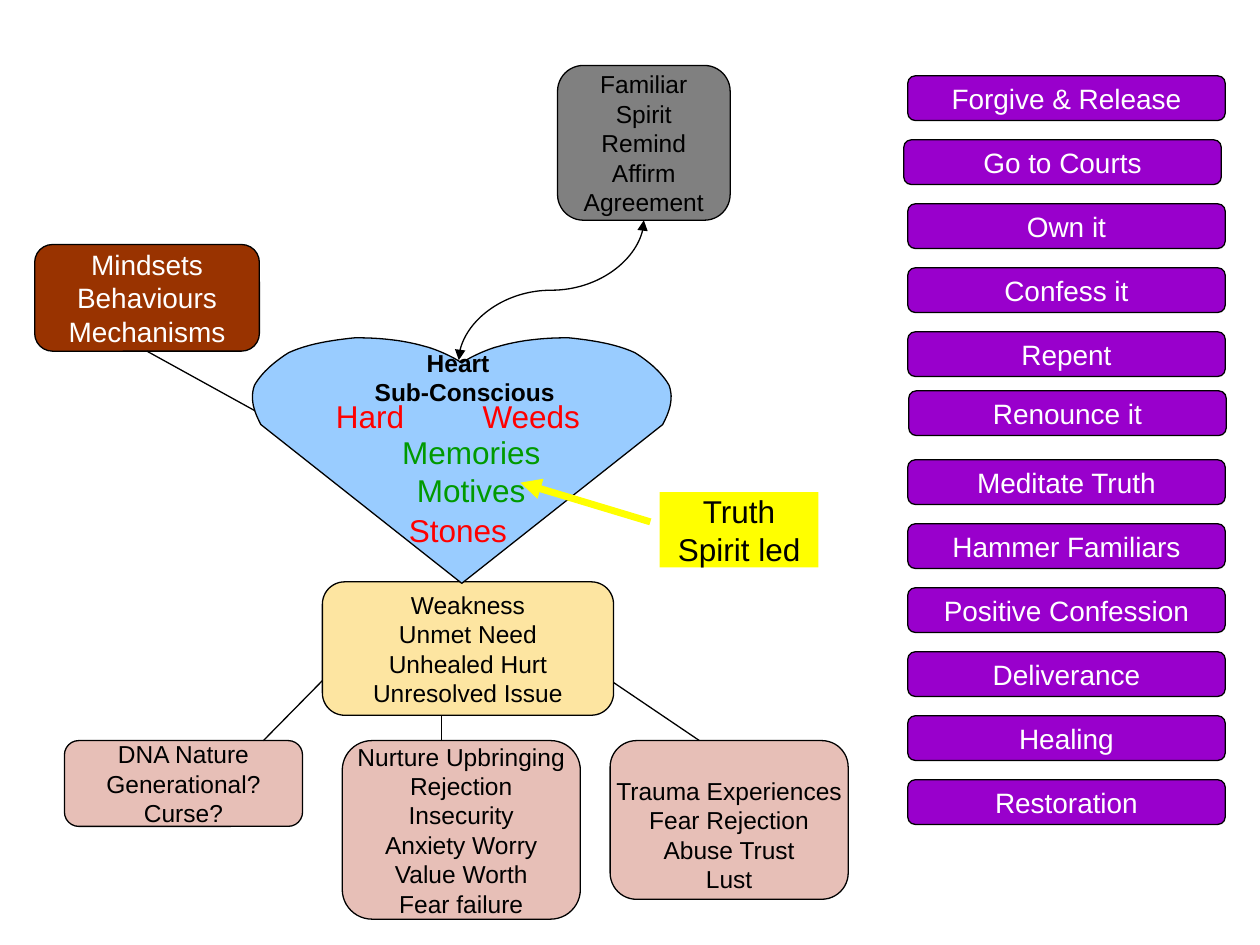
from lxml import etree
from pptx import Presentation
from pptx.dml.color import RGBColor
from pptx.enum.shapes import MSO_CONNECTOR, MSO_SHAPE
from pptx.enum.text import MSO_ANCHOR, PP_ALIGN
from pptx.oxml.ns import qn
from pptx.util import Cm, Pt

ROUNDED = MSO_SHAPE.FLOWCHART_ALTERNATE_PROCESS
RECT = MSO_SHAPE.RECTANGLE
STRAIGHT, CURVE = MSO_CONNECTOR.STRAIGHT, MSO_CONNECTOR.CURVE
MIDDLE, TOP = MSO_ANCHOR.MIDDLE, MSO_ANCHOR.TOP
CENTER = PP_ALIGN.CENTER
BOTTOM_SIDE = 2

COLORS = {
    "black": "000000", "white": "FFFFFF", "pink": "E7BFB7", "grey": "808080",
    "cream": "FDE5A1", "brown": "993300", "blue": "99CCFF", "red": "FF0000",
    "green": "009A00", "purple": "9900CC", "yellow": "FFFF00",
}

BOXES = {
    "dna": ((1.3, 14.93, 4.8, 1.73), "pink", "black", 14,
            ["DNA Nature", "Generational?", "Curse?"]),
    "nurture": ((6.9, 14.93, 4.8, 3.6), "pink", "black", 14,
                ["Nurture Upbringing", "Rejection", "Insecurity",
                 "Anxiety Worry", "Value Worth", "Fear failure"]),
    "trauma": ((12.3, 14.93, 4.8, 3.2), "pink", "black", 14,
               ["Trauma Experiences", "Fear Rejection", "Abuse Trust", "Lust"]),
    "familiar": ((11.24, 1.32, 3.48, 3.12), "grey", "black", 14,
                 ["Familiar", "Spirit", "Remind", "Affirm", "Agreement"]),
    "weakness": ((6.5, 11.73, 5.87, 2.69), "cream", "black", 14,
                 ["Weakness", "Unmet Need", "Unhealed Hurt", "Unresolved Issue"]),
    "mindsets": ((0.7, 4.93, 4.53, 2.15), "brown", "white", 16,
                 ["Mindsets", "Behaviours", "Mechanisms"]),
}

ACTIONS = ["Forgive & Release", "Go to Courts", "Own it", "Confess it", "Repent",
           "Renounce it", "Meditate Truth", "Hammer Familiars",
           "Positive Confession", "Deliverance", "Healing", "Restoration"]
ACTION_LEFT, ACTION_TOP, ACTION_PITCH = 18.3, 1.53, 1.29
ACTION_SIZE = (6.4, 0.9)
ACTION_SHIFTS = {"Go to Courts": (-0.08, 0), "Renounce it": (0.02, -0.1)}

HEART_LABELS = [
    ((6.16, 8, 2.6, 0.76), ["Hard"], "red"),
    ((9.41, 8, 2.6, 0.76), ["Weeds"], "red"),
    ((7.93, 10.3, 2.6, 0.76), ["Stones"], "red"),
    ((7.9, 8.73, 3.2, 1.52), ["Memories", "Motives"], "green"),
]

BRANCHES = [(12.37, 13.76, 14.1, 14.93), (8.9, 14.42, 8.9, 14.93),
            (6.5, 13.72, 5.31, 14.93)]
MINDSET_LINK = (5.23, 8.33, 2.96, 7.08)
SPIRIT_LINK = (9.25, 7.26, 12.98, 4.44)
TRUTH_ARROW = (13.11, 10.52, 10.49, 9.73)

HEART_AXIS = 9.31
HEART_DIP, HEART_TIP = (9.31, 7.32), (9.31, 11.76)
HEART_CURVES = [
    ((9.17, 7.21), (8.79, 7.04), (8.59, 6.99)),
    ((8.15, 6.86), (7.67, 6.81), (7.16, 6.81)),
    ((6.68, 6.86), (6.22, 6.93), (5.82, 7.11)),
    ((5.49, 7.32), (5.26, 7.54), (5.13, 7.77)),
    ((5.03, 8.05), (5.13, 8.31), (5.26, 8.56)),
]
CURVE_STEPS = 12


def rgb(name):
    return RGBColor.from_string(COLORS[name])


def write(sp, lines, size, color, anchor=MIDDLE, wrap=False, bold=False):
    tf = sp.text_frame
    tf.margin_left = tf.margin_right = tf.margin_top = tf.margin_bottom = 0
    tf.vertical_anchor = anchor
    tf.word_wrap = wrap
    tf.text = "\n".join(lines)
    for p in tf.paragraphs:
        p.alignment = CENTER
        p.font.name = "Arial"
        p.font.size = Pt(size)
        p.font.bold = bold
        p.font.color.rgb = rgb(color)
    return tf


def style(sp, fill, outlined=True):
    sp.shadow.inherit = False
    sp.fill.solid()
    sp.fill.fore_color.rgb = rgb(fill)
    if outlined:
        sp.line.color.rgb = rgb("black")
        sp.line.width = Pt(0.75)
    else:
        sp.line.fill.background()


def add_box(s, at, fill, color, size, lines):
    sp = s.shapes.add_shape(ROUNDED, *map(Cm, at))
    style(sp, fill)
    write(sp, lines, size, color)
    return sp


def add_label(s, at, lines, size, color, bold=False):
    sp = s.shapes.add_textbox(*map(Cm, at))
    return write(sp, lines, size, color, TOP, True, bold)


def add_line(s, ends, color="black", width=0.75, kind=STRAIGHT, arrows=()):
    c = s.shapes.add_connector(kind, *map(Cm, ends))
    c.line.color.rgb = rgb(color)
    c.line.width = Pt(width)
    ln = c.line._get_or_add_ln()
    for arrow in arrows:
        etree.SubElement(ln, qn(f"a:{arrow}"), type="triangle")
    etree.SubElement(c._element.spPr, qn("a:effectLst"))
    return c


def add_spirit_link(s, familiar):
    x1, y1, x2, y2 = SPIRIT_LINK
    mid_x, mid_y, width, height = (x1 + x2) / 2, (y1 + y2) / 2, y1 - y2, x2 - x1
    left, top = mid_x - width / 2, mid_y - height / 2
    c = add_line(s, (left, top, left + width, top + height), kind=CURVE,
                 arrows=("headEnd", "tailEnd"))
    c.end_connect(familiar, BOTTOM_SIDE)
    c.left, c.top, c.width, c.height = map(Cm, (left, top, width, height))
    c._element.spPr.find(qn("a:xfrm")).set("rot", "16200000")


def bezier(p0, p1, p2, p3, t):
    u = 1 - t
    return tuple(u**3 * a + 3 * u * u * t * b + 3 * u * t * t * c + t**3 * d
                 for a, b, c, d in zip(p0, p1, p2, p3))


def add_heart(s):
    half = [HEART_DIP]
    for c1, c2, end in HEART_CURVES:
        start = half[-1]
        half += [bezier(start, c1, c2, end, i / CURVE_STEPS)
                 for i in range(1, CURVE_STEPS + 1)]
    mirrored = [(2 * HEART_AXIS - x, y) for x, y in reversed(half[1:])]
    points = [(Cm(x), Cm(y)) for x, y in half + [HEART_TIP] + mirrored]
    fb = s.shapes.build_freeform(*points[0])
    fb.add_line_segments(points[1:], close=True)
    style(fb.convert_to_shape(), "blue")


def add_heart_labels(s):
    tf = add_label(s, (6.63, 7.01, 5.21, 1.19), ["Heart", "Sub-Conscious"],
                   14, "black", True)
    tf.paragraphs[1]._p.get_or_add_pPr().set("marL", str(Cm(0.27)))
    for at, lines, color in HEART_LABELS:
        add_label(s, at, lines, 18, color)


def main():
    prs = Presentation()
    prs.slide_width, prs.slide_height = Cm(25.4), Cm(19.05)
    s = prs.slides.add_slide(prs.slide_layouts[6])

    boxes = {name: add_box(s, *box) for name, box in BOXES.items()}
    boxes["trauma"].text_frame.margin_top = Cm(0.59)

    for ends in BRANCHES:
        add_line(s, ends)
    add_line(s, MINDSET_LINK).end_connect(boxes["mindsets"], BOTTOM_SIDE)
    add_spirit_link(s, boxes["familiar"])
    add_heart(s)
    add_heart_labels(s)

    for i, action in enumerate(ACTIONS):
        dx, dy = ACTION_SHIFTS.get(action, (0, 0))
        at = (ACTION_LEFT + dx, ACTION_TOP + i * ACTION_PITCH + dy, *ACTION_SIZE)
        add_box(s, at, "purple", "white", 16, [action])

    truth = s.shapes.add_shape(RECT, *map(Cm, (13.3, 9.92, 3.2, 1.52)))
    style(truth, "yellow", False)
    write(truth, ["Truth", "Spirit led"], 18, "black", TOP, True)
    add_line(s, TRUTH_ARROW, "yellow", 4, arrows=("tailEnd",))

    prs.save("out.pptx")


if __name__ == "__main__":
    main()
